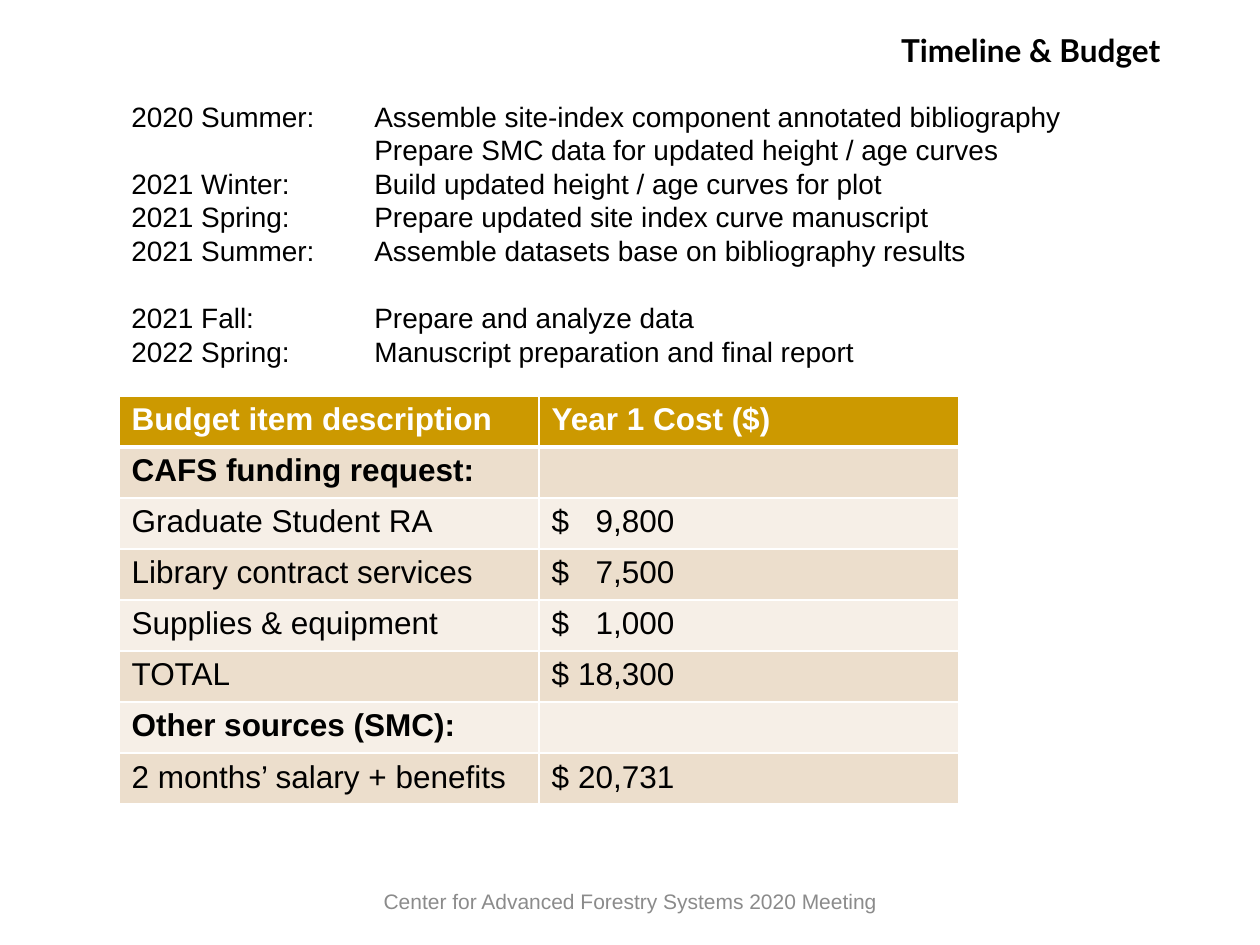
from lxml import etree
from pptx import Presentation, util as u
from pptx.dml.color import RGBColor
from pptx.enum import text
from pptx.oxml.ns import qn

PX = 914400 // 126
INK, WHITE, GOLD, GREY = "000000", "FFFFFF", "CC9900", "8B8B8B"
BANDS = ("ECDECC", "F6EFE7")

TITLE = "Timeline & Budget"
FOOTER = "Center for Advanced Forestry Systems 2020 Meeting"
TIMELINE = [
    ("2020 Summer:", ["Assemble site-index component annotated bibliography",
                      "Prepare SMC data for updated height / age curves"]),
    ("2021 Winter:", ["Build updated height / age curves for plot"]),
    ("2021 Spring:", ["Prepare updated site index curve manuscript"]),
    ("2021 Summer:", ["Assemble datasets base on bibliography results"]),
    ("2021 Fall:", ["Prepare and analyze data"]),
    ("2022 Spring:", ["Manuscript preparation and final report"]),
]
GAP_BEFORE = "2021 Fall:"
BUDGET = [
    ("Budget item description", "Year 1 Cost ($)"),
    ("CAFS funding request:", ""),
    ("Graduate Student RA", "$\t9,800"),
    ("Library contract services", "$\t7,500"),
    ("Supplies & equipment", "$\t1,000"),
    ("TOTAL", "$\t18,300"),
    ("Other sources (SMC):", ""),
    ("2 months’ salary + benefits", "$\t20,731"),
]
BOLD_ROWS = (0, 1, 6)


def px(value):
    return u.Emu(value * PX)


def colour(value):
    return RGBColor.from_string(value)


def style(para, size, ink=INK, name="Arial", bold=False):
    for span in para.runs:
        span.font.size = u.Pt(size)
        span.font.name = name
        span.font.bold = bold
        span.font.color.rgb = colour(ink)


def place(box, left, top, width, height, anchor=text.MSO_ANCHOR.TOP):
    box.left, box.top, box.width, box.height = map(px, (left, top, width, height))
    frame = box.text_frame
    frame.word_wrap = True
    frame.auto_size = text.MSO_AUTO_SIZE.NONE
    frame.vertical_anchor = anchor
    return frame


def add_tab(para, position, align="l"):
    tabs = etree.SubElement(para._p.get_or_add_pPr(), qn("a:tabLst"))
    etree.SubElement(tabs, qn("a:tab"), pos=str(px(position)), algn=align)


def add_borders(cell, bottom):
    settings = cell._tc.get_or_add_tcPr()
    widths = {"L": 1, "R": 1, "T": 1, "B": bottom}
    for index, (side, width) in enumerate(widths.items()):
        line = etree.Element(qn("a:ln" + side), w=str(u.Pt(width)))
        fill = etree.SubElement(line, qn("a:solidFill"))
        etree.SubElement(fill, qn("a:srgbClr"), val=WHITE)
        settings.insert(index, line)


def add_timeline(page):
    box = page.shapes.add_textbox(0, 0, 0, 0)
    frame = place(box, 119, 93, 978, 280)
    for index, (season, tasks) in enumerate(TIMELINE):
        para = frame.paragraphs[0] if index == 0 else frame.add_paragraph()
        para.text = season + "\t" + "\v\t".join(tasks)
        add_tab(para, 243)
        para.line_spacing = u.Pt(19.2)
        if season == GAP_BEFORE:
            para.space_before = u.Pt(19.2)
        style(para, 16)


def add_budget(page):
    rows, columns = len(BUDGET), len(BUDGET[0])
    table = page.shapes.add_table(
        rows, columns, px(119), px(396), px(420 * columns), px(51 * rows)).table
    for row, values in enumerate(BUDGET):
        for column, value in enumerate(values):
            cell = table.cell(row, column)
            cell.fill.solid()
            cell.fill.fore_color.rgb = colour(BANDS[(row - 1) % 2] if row else GOLD)
            add_borders(cell, 1 if row else 3)
            para = cell.text_frame.paragraphs[0]
            para.text = value
            if "\t" in value:
                add_tab(para, 123, "r")
            style(para, 18, INK if row else WHITE, bold=row in BOLD_ROWS)


def main():
    deck = Presentation()
    deck.slide_width, deck.slide_height = px(1260), px(945)
    page = deck.slides.add_slide(deck.slide_layouts[5])

    title = place(page.shapes.title, 861, 25, 312, 50).paragraphs[0]
    title.text = TITLE
    title.alignment = text.PP_ALIGN.RIGHT
    style(title, 18, name="Lato", bold=True)

    add_timeline(page)
    add_budget(page)

    box = page.shapes.add_textbox(0, 0, 0, 0)
    footer = place(box, 347, 876, 567, 50, text.MSO_ANCHOR.MIDDLE).paragraphs[0]
    footer.text = FOOTER
    footer.alignment = text.PP_ALIGN.CENTER
    style(footer, 12, GREY)

    deck.save("out.pptx")


if __name__ == "__main__":
    main()
